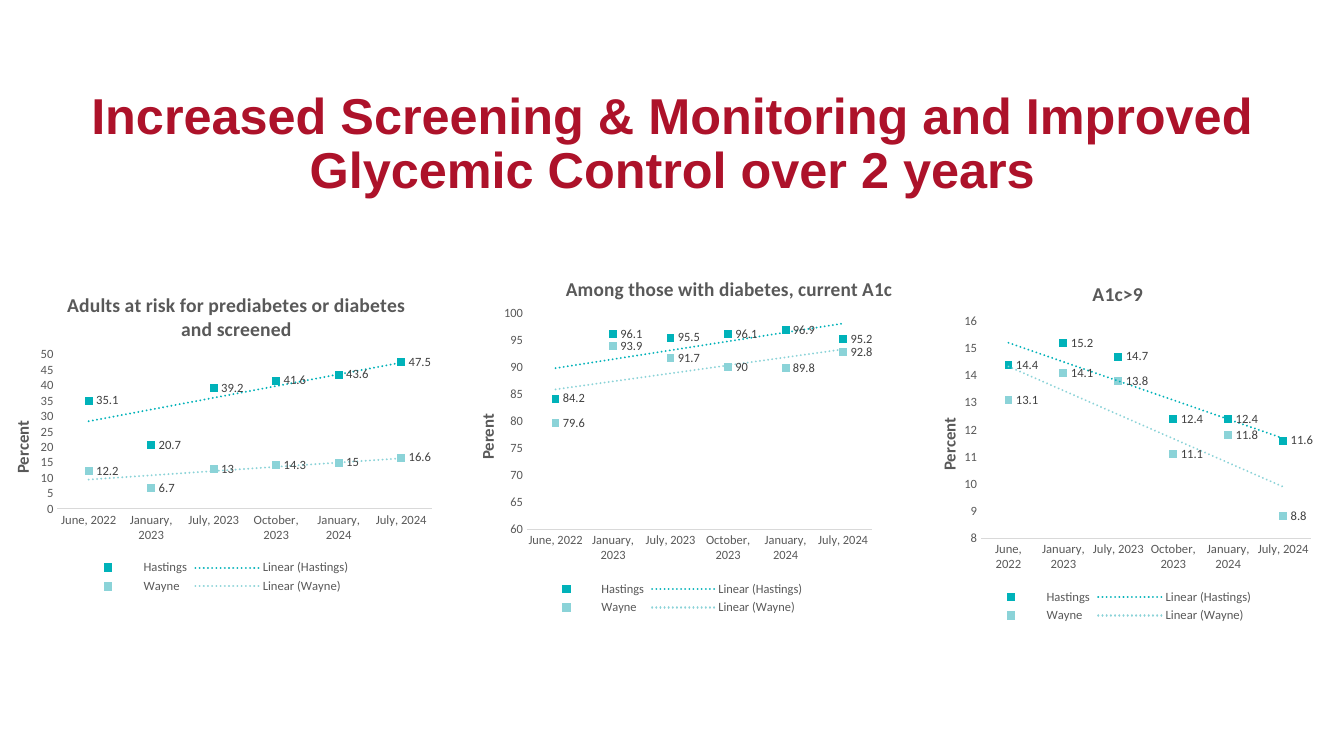
"""Build a slide with three line charts on diabetes screening, monitoring and control."""
import lxml.etree
import pptx
import pptx.chart.data
import pptx.dml.color
import pptx.enum.chart
import pptx.enum.text
import pptx.oxml
import pptx.oxml.ns
import pptx.util
from pptx.util import Inches

COLORS = {
    "heading": "AD122A",
    "Hastings": "00B2B9",
    "Wayne": "8BD3D8",
    "text": "595959",
    "label": "404040",
    "axis": "D9D9D9",
}
MONTHS = ["June, 2022", "January, 2023", "July, 2023",
          "October, 2023", "January, 2024", "July, 2024"]
CHARTS = [
    {"title": "Adults at risk for prediabetes or diabetes and screened", "axis": "Percent",
     "frame": (-0.17, 2.68, 4.55, 3.25), "plot": (0.57, 3.52, 3.72, 1.53),
     "title_at": (0.63, 2.85), "axis_at": (0.08, 4.14), "scale": (0, 50, 5),
     "Hastings": (35.1, 20.7, 39.2, 41.6, 43.6, 47.5),
     "Wayne": (12.2, 6.7, 13, 14.3, 15, 16.6)},
    {"title": "Among those with diabetes, current A1c", "axis": "Perent",
     "frame": (4.46, 2.47, 4.43, 3.67), "plot": (5.24, 3.11, 3.49, 2.14),
     "title_at": (5.6, 2.7), "axis_at": (4.7, 4.07), "scale": (60, 100, 5),
     "Hastings": (84.2, 96.1, 95.5, 96.1, 96.9, 95.2),
     "Wayne": (79.6, 93.9, 91.7, 90, 89.8, 92.8)},
    {"title": "A1c>9", "axis": "Percent",
     "frame": (9.02, 2.56, 4.08, 3.66), "plot": (9.73, 3.19, 3.27, 2.15),
     "title_at": (10.8, 2.75), "axis_at": (9.27, 4.11), "scale": (8, 16, 1),
     "Hastings": (14.4, 15.2, 14.7, 12.4, 12.4, 11.6),
     "Wayne": (13.1, 14.1, 13.8, 11.1, 11.8, 8.8)},
]


def style_font(font, size, color, bold=False, name="Calibri"):
    font.name = name
    font.size = pptx.util.Pt(size)
    font.bold = bold
    font.color.rgb = pptx.dml.color.RGBColor.from_string(COLORS[color])


def place(element, index, frame, area, target=""):
    for layout in element.findall(pptx.oxml.ns.qn("c:layout")):
        element.remove(layout)
    layout = pptx.oxml.parse_xml(
        f'<c:layout {pptx.oxml.ns.nsdecls("c")}><c:manualLayout>{target}'
        '<c:xMode val="edge"/><c:yMode val="edge"/></c:manualLayout></c:layout>')
    fractions = [(area[0] - frame[0]) / frame[2], (area[1] - frame[1]) / frame[3]]
    if len(area) == 4:
        fractions += [area[2] / frame[2], area[3] / frame[3]]
    for name, fraction in zip("xywh", fractions):
        entry = lxml.etree.SubElement(layout[0], pptx.oxml.ns.qn(f"c:{name}"))
        entry.set("val", f"{fraction:.4f}")
    element.insert(index, layout)


presentation = pptx.Presentation()
presentation.slide_width = Inches(13.33)
presentation.slide_height = Inches(7.5)
slide = presentation.slides.add_slide(presentation.slide_layouts[5])

heading = slide.shapes.title
heading.left, heading.top = Inches(0.77), Inches(0.77)
heading.width, heading.height = Inches(11.8), Inches(1.34)
frame = heading.text_frame
frame.text = "Increased Screening & Monitoring and Improved Glycemic Control over 2 years"
frame.word_wrap = True
frame.auto_size = pptx.enum.text.MSO_AUTO_SIZE.NONE
frame.vertical_anchor = pptx.enum.text.MSO_ANCHOR.MIDDLE
frame.margin_left = frame.margin_right = Inches(0.1)
frame.margin_top = frame.margin_bottom = 0
paragraph = frame.paragraphs[0]
paragraph.alignment = pptx.enum.text.PP_ALIGN.CENTER
paragraph.line_spacing = 0.9
style_font(paragraph.runs[0].font, 36, "heading", True, "Arial")

for details in CHARTS:
    data = pptx.chart.data.CategoryChartData()
    data.categories = MONTHS
    for county in ("Hastings", "Wayne"):
        data.add_series(county, details[county])
    area = details["frame"]
    chart = slide.shapes.add_chart(
        pptx.enum.chart.XL_CHART_TYPE.LINE_MARKERS, *map(Inches, area), data).chart
    chart.font.name = "Calibri"
    chart.font.size = pptx.util.Pt(10)

    chart.has_title = True
    chart.has_legend = True
    chart.legend.position = pptx.enum.chart.XL_LEGEND_POSITION.BOTTOM
    chart.legend.include_in_layout = False
    style_font(chart.legend.font, 9, "text")

    months, values = chart.category_axis, chart.value_axis
    for axis in (months, values):
        axis.has_major_gridlines = False
        axis.major_tick_mark = pptx.enum.chart.XL_TICK_MARK.NONE
        axis.minor_tick_mark = pptx.enum.chart.XL_TICK_MARK.NONE
        style_font(axis.tick_labels.font, 9, "text")
    months.format.line.color.rgb = pptx.dml.color.RGBColor.from_string(COLORS["axis"])
    months.format.line.width = pptx.util.Pt(0.75)
    values.format.line.fill.background()
    values.minimum_scale, values.maximum_scale, values.major_unit = details["scale"]
    values.has_title = True

    for title, text, size, position in (
            (chart.chart_title, details["title"], 14, details["title_at"]),
            (values.axis_title, details["axis"], 12, details["axis_at"])):
        title.text_frame.text = text
        style_font(title.text_frame.paragraphs[0].runs[0].font, size, "text", True)
        place(title._element, 1, area, position)
    body = next(values.axis_title._element.iter(pptx.oxml.ns.qn("a:bodyPr")))
    body.set("rot", "-5400000")
    body.set("vert", "horz")
    place(chart._chartSpace.chart.plotArea, 0, area, details["plot"],
          '<c:layoutTarget val="inner"/>')

    for series in chart.plots[0].series:
        color = COLORS[series.name]
        series.smooth = False
        series.format.line.fill.background()
        marker = series.marker
        marker.style = pptx.enum.chart.XL_MARKER_STYLE.SQUARE
        marker.size = 5
        marker.format.fill.solid()
        marker.format.fill.fore_color.rgb = pptx.dml.color.RGBColor.from_string(color)
        marker.format.line.color.rgb = pptx.dml.color.RGBColor.from_string(color)
        labels = series.data_labels
        labels.show_value = True
        labels.position = pptx.enum.chart.XL_LABEL_POSITION.RIGHT
        style_font(labels.font, 9, "label")
        trend = pptx.oxml.parse_xml(
            f'<c:trendline {pptx.oxml.ns.nsdecls("c", "a")}><c:spPr>'
            f'<a:ln w="19050" cap="rnd"><a:solidFill><a:srgbClr val="{color}"/></a:solidFill>'
            '<a:prstDash val="sysDot"/></a:ln></c:spPr><c:trendlineType val="linear"/>'
            '<c:dispRSqr val="0"/><c:dispEq val="0"/></c:trendline>')
        series._element.find(pptx.oxml.ns.qn("c:cat")).addprevious(trend)

presentation.save("out.pptx")
